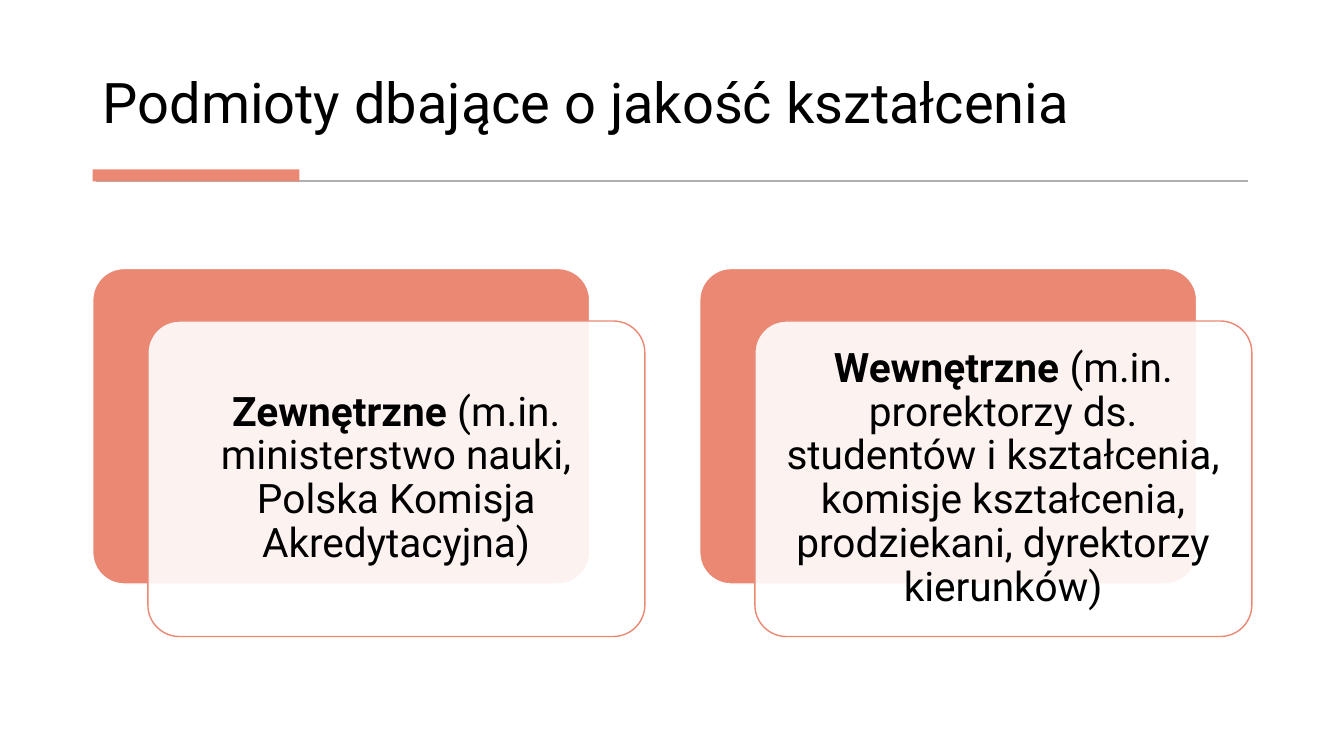
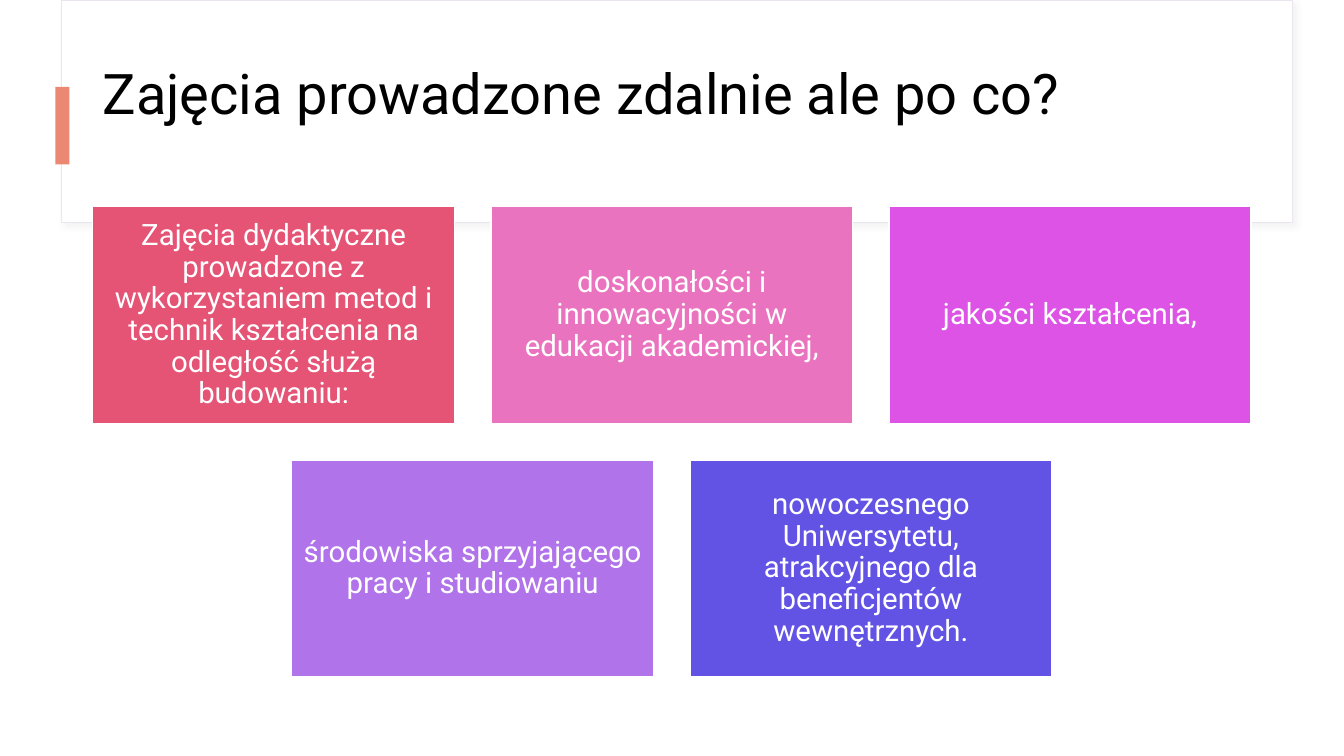
from lxml.etree import SubElement
from pptx import Presentation
from pptx.dml.color import RGBColor
from pptx.enum.shapes import MSO_CONNECTOR, MSO_SHAPE
from pptx.enum.text import MSO_ANCHOR, PP_ALIGN
from pptx.oxml.ns import qn
from pptx.util import Pt

# Content
ENTITIES_TITLE = "Podmioty dbające o jakość kształcenia"
ENTITIES = [
    ("Zewnętrzne", " (m.in. ministerstwo nauki, Polska Komisja Akredytacyjna)"),
    ("Wewnętrzne", " (m.in. prorektorzy ds. studentów i kształcenia, komisje "
                   "kształcenia, prodziekani, dyrektorzy kierunków)"),
]
REMOTE_TITLE = "Zajęcia prowadzone zdalnie ale po co?"
REMOTE_ROWS = [
    [("Zajęcia dydaktyczne prowadzone z wykorzystaniem metod i technik "
      "kształcenia na odległość służą budowaniu:", "E55375"),
     ("doskonałości i innowacyjności w edukacji akademickiej,", "EA73C0"),
     ("jakości kształcenia,", "DC53E5")],
    [("środowiska sprzyjającego pracy i studiowaniu", "B073EA"),
     ("nowoczesnego Uniwersytetu, atrakcyjnego dla beneficjentów wewnętrznych.",
      "6253E5")],
]

# Shared style
FONT = "Roboto"
ACCENT, WHITE, BLACK = "EA8873", "FFFFFF", "000000"
RULE, FRAME_LINE, FRAME_SHADOW = "B0B0B0", "EBE5F0", "D9D9D9"
LEFT, CONTENT_W = 66.24, 827.3


def rgb(color):
    return RGBColor.from_string(color)


def add_box(s, kind, x, y, w, h, fill, line=None, line_w=1):
    sp = s.shapes.add_shape(kind, Pt(x), Pt(y), Pt(w), Pt(h))
    sp.shadow.inherit = False
    sp.fill.solid()
    sp.fill.fore_color.rgb = rgb(fill)
    if line:
        sp.line.color.rgb = rgb(line)
        sp.line.width = Pt(line_w)
    else:
        sp.line.fill.background()
    return sp


def write(sp, runs, size, color, align, anchor, margins):
    """Fill a shape with one paragraph; runs are (text, bold) pairs."""
    tf = sp.text_frame
    tf.word_wrap = True
    tf.vertical_anchor = anchor
    tf.margin_left = tf.margin_right = Pt(margins[0])
    tf.margin_top = tf.margin_bottom = Pt(margins[1])
    p = tf.paragraphs[0]
    p.alignment = align
    p.line_spacing = 0.9
    p.font.name, p.font.size = FONT, Pt(size)
    p.font.color.rgb = rgb(color)
    for text, bold in runs:
        r = p.add_run()
        r.text = text
        if bold:
            r.font.bold = True


def add_title(s, text, y, h, anchor):
    sp = s.shapes.add_textbox(Pt(LEFT), Pt(y), Pt(CONTENT_W), Pt(h))
    write(sp, [(text, False)], 40, BLACK, PP_ALIGN.LEFT, anchor, (7.2, 3.6))


def add_alpha(color_element, percent):
    SubElement(color_element, qn("a:alpha"), val=str(percent * 1000))


def add_rule(s, x1, x2, y):
    line = s.shapes.add_connector(MSO_CONNECTOR.STRAIGHT, Pt(x1), Pt(y), Pt(x2), Pt(y))
    line.line.color.rgb = rgb(RULE)
    line.line.width = Pt(1.25)
    SubElement(line._element.spPr, qn("a:effectLst"))


def add_header_frame(s):
    sp = add_box(s, MSO_SHAPE.RECTANGLE, 44, 0, 879, 159, WHITE, FRAME_LINE, 0.75)
    effects = sp._element.spPr.find(qn("a:effectLst"))
    shadow = SubElement(effects, qn("a:outerShdw"), blurRad=str(Pt(4)),
                        dist=str(Pt(3)), dir=str(45 * 60000))
    add_alpha(SubElement(shadow, qn("a:srgbClr"), val=FRAME_SHADOW), 30)
    add_box(s, MSO_SHAPE.RECTANGLE, 39.6, 62, 10, 55.5, ACCENT)


def build_entities(s):
    add_title(s, ENTITIES_TITLE, 20.2, 80, MSO_ANCHOR.BOTTOM)
    add_rule(s, 68.4, 891.4, 129.2)
    add_box(s, MSO_SHAPE.RECTANGLE, LEFT, 121, 147.6, 8.64, ACCENT)

    # Each card: a solid back plate and a translucent front plate
    card_w, card_h, top, pitch = 355, 225.4, 191.8, 433.6
    shift_x, shift_y = 39.4, 37.5
    for i, (name, detail) in enumerate(ENTITIES):
        x = LEFT + i * pitch
        back = add_box(s, MSO_SHAPE.ROUNDED_RECTANGLE, x, top, card_w, card_h,
                       ACCENT, WHITE)
        front = add_box(s, MSO_SHAPE.ROUNDED_RECTANGLE, x + shift_x, top + shift_y,
                        card_w, card_h, WHITE, ACCENT)
        for plate in (back, front):
            plate.adjustments[0] = 0.1
        add_alpha(front._element.spPr.find(qn("a:solidFill"))[0], 90)
        write(front, [(name, True), (detail, False)], 29, BLACK,
              PP_ALIGN.CENTER, MSO_ANCHOR.MIDDLE, (8.6, 8.6))


def build_remote(s):
    add_header_frame(s)
    add_title(s, REMOTE_TITLE, 26.6, 85, MSO_ANCHOR.MIDDLE)

    # Tiles: rows centred on the content width
    tile_w, tile_h, top, gap = 258.5, 155, 147.6, 25.9
    for row, tiles in enumerate(REMOTE_ROWS):
        row_w = len(tiles) * (tile_w + gap) - gap
        x0 = LEFT + (CONTENT_W - row_w) / 2
        for col, (text, color) in enumerate(tiles):
            sp = add_box(s, MSO_SHAPE.RECTANGLE, x0 + col * (tile_w + gap),
                         top + row * (tile_h + gap), tile_w, tile_h, color, WHITE)
            write(sp, [(text, False)], 21, WHITE,
                  PP_ALIGN.CENTER, MSO_ANCHOR.MIDDLE, (6.3, 6.3))


def main():
    prs = Presentation()
    prs.slide_width, prs.slide_height = Pt(960), Pt(540)
    for build in (build_entities, build_remote):
        build(prs.slides.add_slide(prs.slide_layouts[6]))
    prs.save("out.pptx")


if __name__ == "__main__":
    main()
